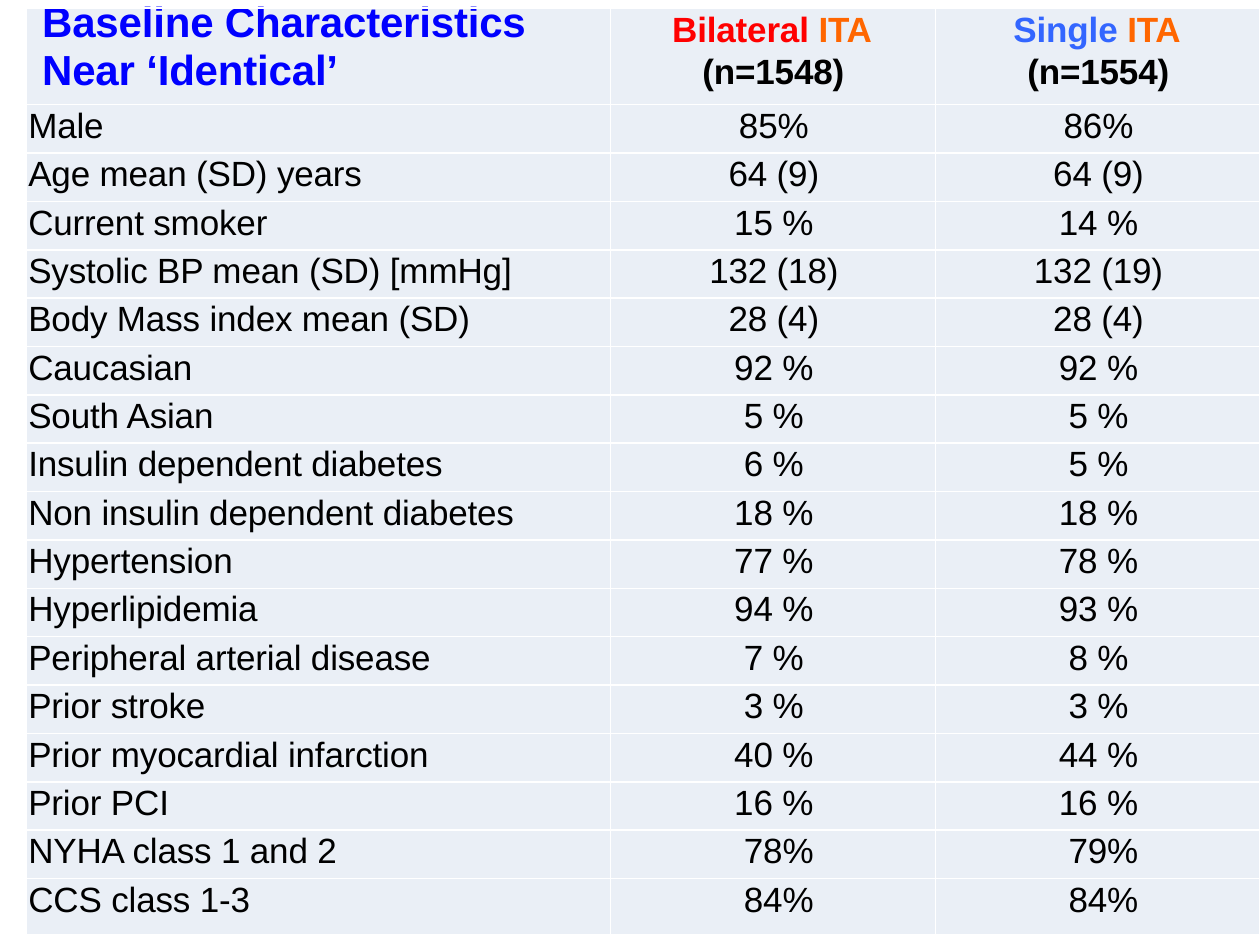
from lxml import etree
from pptx import Presentation
from pptx.dml.color import RGBColor
from pptx.enum.text import PP_ALIGN
from pptx.oxml.ns import qn
from pptx.util import Cm, Pt

LEFT, CENTER = PP_ALIGN.LEFT, PP_ALIGN.CENTER
FONT = "Arial"
COLORS = {
    "cell": "EAEFF6", "border": "FFFFFF", "text": "000000", "title": "0000FF",
    "bilateral": "FF0000", "single": "3366FF", "ita": "FF6600",
}

# Label, bilateral value, single value
ROWS = [
    ("Male", "85%", "86%"),
    ("Age mean (SD) years", "64 (9)", "64 (9)"),
    ("Current smoker", "15 %", "14 %"),
    ("Systolic BP mean (SD) [mmHg]", "132 (18)", "132 (19)"),
    ("Body Mass index mean (SD)", "28 (4)", "28 (4)"),
    ("Caucasian", "92 %", "92 %"),
    ("South Asian", "5 %", "5 %"),
    ("Insulin dependent diabetes", "6 %", "5 %"),
    ("Non insulin dependent diabetes", "18 %", "18 %"),
    ("Hypertension", "77 %", "78 %"),
    ("Hyperlipidemia", "94 %", "93 %"),
    ("Peripheral arterial disease", "7 %", "8 %"),
    ("Prior stroke", "3 %", "3 %"),
    ("Prior myocardial infarction", "40 %", "44 %"),
    ("Prior PCI", "16 %", "16 %"),
    ("NYHA class 1 and 2", "78%", "79%"),
    ("CCS class 1-3", "84%", "84%"),
]
COLUMN_WIDTHS = [Cm(11.79), Cm(6.55), Cm(6.54)]
HEADER_HEIGHT, LAST_HEIGHT = Cm(1.95), Cm(1.14)
ROW_HEIGHT = Cm(15.6) // (len(ROWS) - 1)
ROW_HEIGHTS = [HEADER_HEIGHT] + [ROW_HEIGHT] * (len(ROWS) - 1) + [LAST_HEIGHT]


def style_cell(cell):
    cell.margin_left = cell.margin_right = cell.margin_top = cell.margin_bottom = 0
    properties = cell._tc.get_or_add_tcPr()
    for side in ("lnL", "lnR", "lnT", "lnB"):
        line = etree.SubElement(properties, qn("a:" + side), w=str(Pt(1)))
        fill = etree.SubElement(line, qn("a:solidFill"))
        etree.SubElement(fill, qn("a:srgbClr"), val=COLORS["border"])
    cell.fill.solid()
    cell.fill.fore_color.rgb = RGBColor.from_string(COLORS["cell"])


def write(para, spans, size, spacing, margin, indent=0, align=LEFT, bold=False):
    para.alignment = align
    para.line_spacing = Pt(spacing)
    properties = para._p.get_or_add_pPr()
    properties.set("marL", str(Cm(margin)))
    properties.set("indent", str(Cm(indent)))
    for text, color in spans:
        span = para.add_run()
        span.text = text
        span.font.name = FONT
        span.font.size = Pt(size)
        span.font.bold = bold
        span.font.color.rgb = RGBColor.from_string(COLORS[color])
        span.font._element.set("spc", "-10")


deck = Presentation()
deck.slide_width, deck.slide_height = Cm(25.4), Cm(19.05)
page = deck.slides.add_slide(deck.slide_layouts[6])

# Table grid
table = page.shapes.add_table(
    len(ROW_HEIGHTS), len(COLUMN_WIDTHS), Cm(0.52), Cm(0.16),
    sum(COLUMN_WIDTHS), sum(ROW_HEIGHTS),
).table
table.horz_banding = False
for column, width in zip(table.columns, COLUMN_WIDTHS):
    column.width = width
for row, height in zip(table.rows, ROW_HEIGHTS):
    row.height = height
for cell in table.iter_cells():
    style_cell(cell)

# Heading cell
heading = table.cell(0, 0).text_frame
write(heading.paragraphs[0], [("Baseline Characteristics", "title")],
      24, 22.2, 0.33, bold=True)
write(heading.add_paragraph(), [("Near ‘Identical’", "title")],
      24, 27.4, 0.33, bold=True)

# Group headings: the count wraps to the second line
GROUPS = [("Bilateral ", "bilateral", "(n=1548)", -0.61),
          ("Single ", "single", "(n=1554)", -0.28)]
for number, (group, color, count, indent) in enumerate(GROUPS, start=1):
    para = table.cell(0, number).text_frame.paragraphs[0]
    para.space_before = Pt(0.2)
    write(para, [(group, color), ("ITA ", "ita"), (count, "text")],
          20, 24, 1.85, indent, bold=True)

# Characteristics; the two class rows sit a little further right
for row_number, values in enumerate(ROWS, start=1):
    value_margin = 0.23 if "class" in values[0] else 0.03
    for column_number, value in enumerate(values):
        para = table.cell(row_number, column_number).text_frame.paragraphs[0]
        margin, align = (value_margin, CENTER) if column_number else (0.05, LEFT)
        write(para, [(value, "text")], 20, 23.4, margin, align=align)

deck.save("out.pptx")
